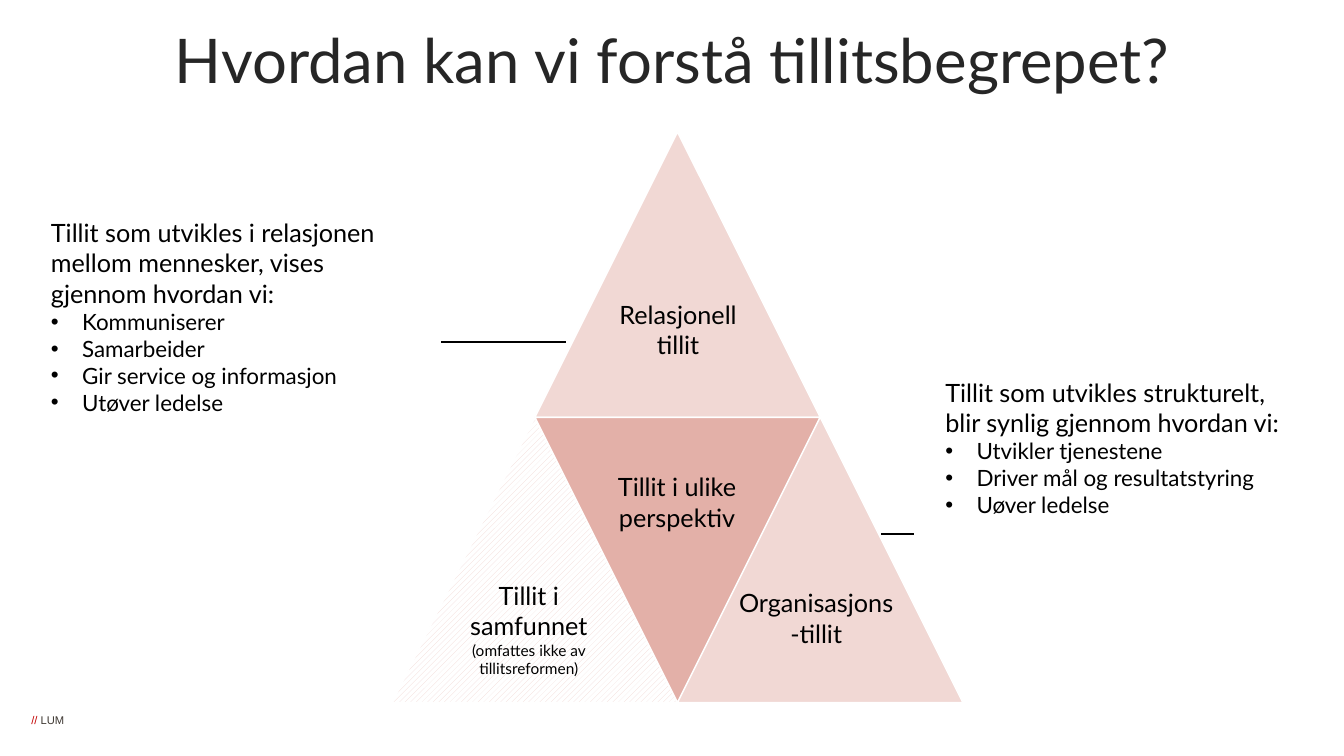
from lxml.etree import SubElement as Sub
from pptx import Presentation
from pptx.dml.color import RGBColor as RGB
from pptx.enum.dml import MSO_PATTERN as Pat
from pptx.enum.shapes import MSO_CONNECTOR as Conn, MSO_SHAPE as Kind
from pptx.enum.text import MSO_ANCHOR as Anchor, MSO_AUTO_SIZE as Auto, PP_ALIGN as Align
from pptx.oxml.ns import qn
from pptx.util import Inches as In, Pt

HUES = {"white": "FFFFFF", "black": "000000", "title": "262626", "pale": "F1D8D4",
        "rose": "E3B0A8", "red": "C30000", "foot": "3E3832"}
SIDE = 2.83


def hue(name):
    """Return the named colour."""
    return RGB.from_string(HUES[name])


def place(shape, box):
    """Move a shape to the box given in inches."""
    shape.left, shape.top, shape.width, shape.height = map(In, box)


def style(run, size, tint="black", face="Lato"):
    """Format one run."""
    run.font.size, run.font.name, run.font.color.rgb = Pt(size), face, hue(tint)


def head(slide, box, text):
    """Fill the title placeholder."""
    title = slide.shapes.title
    place(title, box)
    frame = title.text_frame
    frame.text = text
    frame.vertical_anchor, frame.auto_size = Anchor.TOP, Auto.NONE
    para = frame.paragraphs[0]
    para.alignment, para.line_spacing = Align.CENTER, 0.9
    style(para.runs[0], 44, "title")


def label(slide, box, *lines):
    """Write a centred label, with smaller lines after the first."""
    frame = slide.shapes.add_textbox(*map(In, box)).text_frame
    frame.word_wrap = True
    frame.text = "\n".join(lines)
    for row, para in enumerate(frame.paragraphs):
        para.alignment = Align.CENTER
        style(para.runs[0], 11 if row else 18)


def prism(slide, left, top):
    """Draw the four triangles and their labels on a half-side grid."""
    cells = [(1, 0, "pale", 0), (0, 1, None, 0), (1, 1, "rose", 180), (2, 1, "pale", 0)]
    for col, row, tint, turn in cells:
        box = left + col * SIDE / 2, top + row * SIDE, SIDE, SIDE
        shape = slide.shapes.add_shape(Kind.ISOSCELES_TRIANGLE, *map(In, box))
        shape.shadow.inherit, shape.rotation = False, turn
        fill = shape.fill
        if tint:
            fill.solid()
            fill.fore_color.rgb = hue(tint)
        else:
            fill.patterned()
            fill.pattern = Pat.WIDE_UPWARD_DIAGONAL
            fill.fore_color.rgb, fill.back_color.rgb = hue("pale"), hue("white")
        shape.line.color.rgb, shape.line.width = hue("white"), Pt(1)
    texts = [(1.95, 3.32, 0.71, "Tillit i ulike perspektiv"),
             (3.33, 4.47, 0.71, "Organisasjons-tillit"),
             (0.48, 4.4, 1.41, "Tillit i samfunnet", "(omfattes ikke av tillitsreformen)"),
             (1.96, 1.61, 0.71, "Relasjonell tillit")]
    for x, y, high, *lines in texts:
        label(slide, (left + x, top + y, 1.75, high), *lines)


def note(slide, index, box, base, intro, *items):
    """Fill a body placeholder with an intro and a bulleted list."""
    body = slide.placeholders[index]
    place(body, box)
    Sub(Sub(body._element.spPr, qn("a:prstGeom"), prst="roundRect"), qn("a:avLst"))
    body.fill.solid()
    body.fill.fore_color.rgb = hue("white")
    Sub(body._element.spPr.find(".//" + qn("a:srgbClr")), qn("a:alpha"), val="88000")
    frame = body.text_frame
    frame.text = "\n".join((intro,) + items)
    frame.vertical_anchor, frame.auto_size = Anchor.MIDDLE, Auto.NONE
    frame.margin_bottom = In(base)
    for row, para in enumerate(frame.paragraphs):
        para.space_before = Pt(0)
        style(para.runs[0], 16 if row else 18)
        props = para._p.get_or_add_pPr()
        dent = In(0.31) if row else 0
        props.set("marL", str(dent))
        props.set("indent", str(-dent))
        if row:
            Sub(props, qn("a:buFont"), typeface="Arial")
            Sub(props, qn("a:buChar"), char="•")
        else:
            Sub(props, qn("a:buNone"))


def link(slide, start, end, y):
    """Draw a level line between two points."""
    line = slide.shapes.add_connector(Conn.STRAIGHT, *map(In, (start, y, end, y)))
    line.line.color.rgb, line.line.width = hue("black"), Pt(1.5)
    Sub(line._element.spPr, qn("a:effectLst"))


def foot(slide, box):
    """Write the footer mark."""
    frame = slide.shapes.add_textbox(*map(In, box)).text_frame
    frame.word_wrap = True
    frame.margin_left = In(0.04)
    frame.margin_top = frame.margin_right = frame.margin_bottom = 0
    for text, tint in (("// ", "red"), ("LUM", "foot")):
        run = frame.paragraphs[0].add_run()
        run.text = text
        style(run, 8, tint, "Arial")


def main():
    """Build and save the slide."""
    deck = Presentation()
    deck.slide_width, deck.slide_height = In(13.33), In(7.5)
    slide = deck.slides.add_slide(deck.slide_layouts[3])
    foot(slide, (0.27, 7.08, 2.51, 0.13))
    prism(slide, 3.89, 1.31)
    head(slide, (0.92, 0.25, 11.5, 1.45), "Hvordan kan vi forstå tillitsbegrepet?")
    note(slide, 1, (0.22, 1.39, 4.14, 3.8), 0.35,
         "Tillit som utvikles i relasjonen mellom mennesker, vises gjennom hvordan vi:",
         "Kommuniserer", "Samarbeider", "Gir service og informasjon", "Utøver ledelse")
    note(slide, 2, (9.09, 2.54, 4.15, 3.8), 0.05,
         "Tillit som utvikles strukturelt, blir synlig gjennom hvordan vi:",
         "Utvikler tjenestene", "Driver mål og resultatstyring", "Uøver ledelse")
    link(slide, 5.61, 4.37, 3.39)
    link(slide, 8.74, 9.07, 5.3)
    deck.save("out.pptx")


if __name__ == "__main__":
    main()
